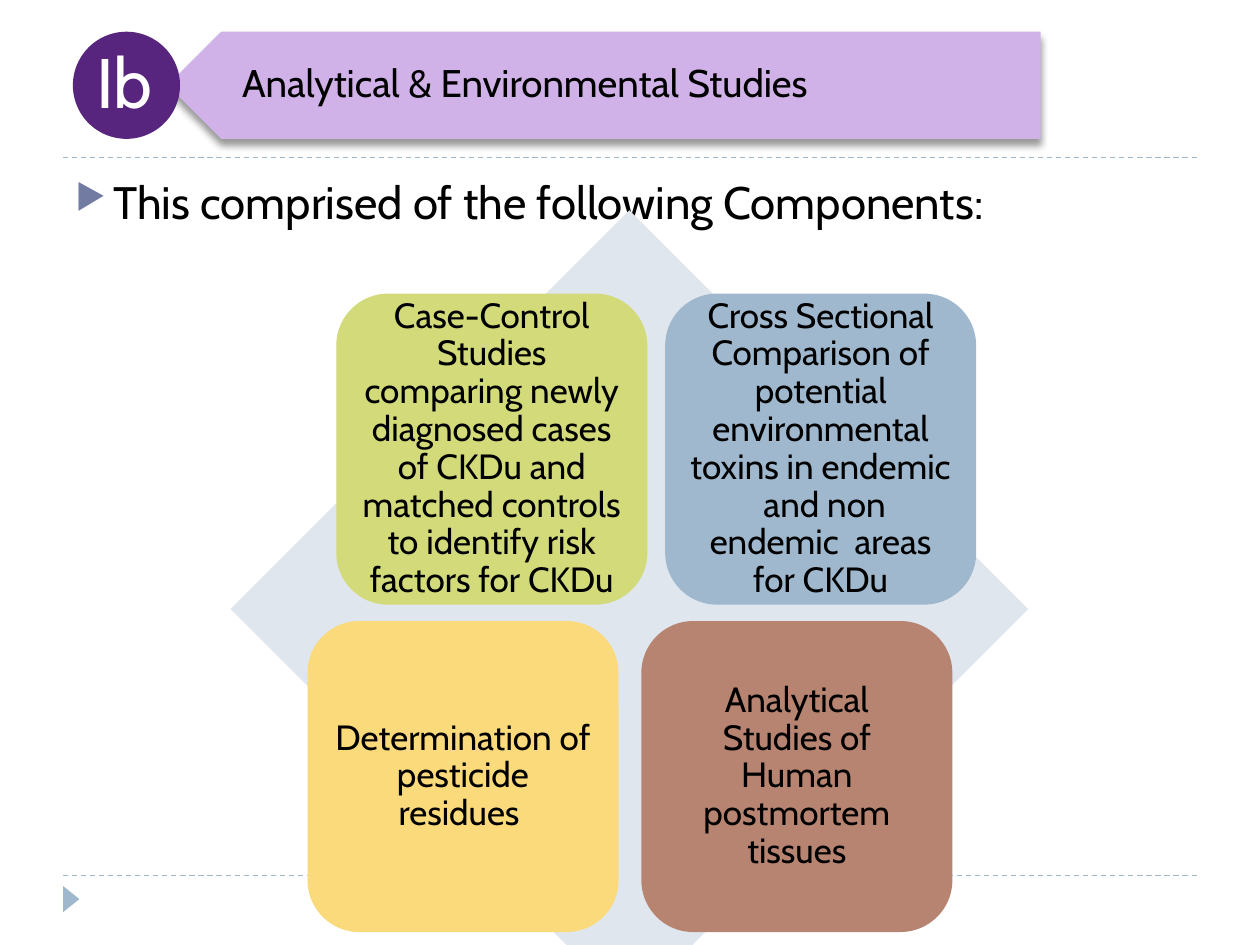
"""Build the slide on analytical and environmental studies of CKDu."""
import lxml.etree
import pptx
import pptx.dml.color
import pptx.enum.dml
import pptx.enum.shapes
import pptx.enum.text
import pptx.oxml
import pptx.oxml.ns
import pptx.util

Cm = pptx.util.Cm
SHAPE = pptx.enum.shapes.MSO_SHAPE
ALIGN = pptx.enum.text.PP_ALIGN
ANCHOR = pptx.enum.text.MSO_ANCHOR
qn = pptx.oxml.ns.qn

FONT = "Cabin"
COLORS = {
    "text": "000000", "badge_text": "FFFFFF", "badge": "57257D",
    "banner": "D1B2E8", "rule": "9FB8CD", "bullet": "727CA3",
    "diamond": "DFE6ED", "blue": "9FB8CD", "green": "D2DA7A",
    "yellow": "FADA7A", "brown": "B88472",
}
BADGE = "Ib"
TITLE = "Analytical & Environmental Studies"
INTRO = "This comprised of the following Components:"
CARD_SIZE = 6.27
CARD_ROWS = [
    (5.92, [
        (6.78, "green", "Case-Control Studies comparing newly diagnosed cases of CKDu "
                        "and matched controls to identify risk factors for CKDu"),
        (13.41, "blue", "Cross Sectional Comparison of potential environmental toxins "
                        "in endemic  and non endemic  areas for CKDu"),
    ]),
    (12.52, [
        (6.2, "yellow", "Determination of pesticide residues "),
        (12.93, "brown", "Analytical Studies of Human postmortem tissues"),
    ]),
]
RULE_TOPS = (17.65, 3.18)
RULE_ENDS = (1.27, 24.13)


def rgb(color):
    return pptx.dml.color.RGBColor.from_string(COLORS[color])


def add_filled(slide, preset, box, color, rotation=0):
    shape = slide.shapes.add_shape(preset, *map(Cm, box))
    shape.shadow.inherit = False
    shape.fill.solid()
    shape.fill.fore_color.rgb = rgb(color)
    shape.line.fill.background()
    shape.rotation = rotation
    return shape


def write(shape, text, size, color="text", anchor=ANCHOR.TOP, align=ALIGN.LEFT,
          margins=(0.25, 0.13, 0.25, 0.13), spacing=None):
    frame = shape.text_frame
    frame.text = text
    frame.word_wrap = True
    frame.vertical_anchor = anchor
    (frame.margin_left, frame.margin_top,
     frame.margin_right, frame.margin_bottom) = map(Cm, margins)
    paragraph = frame.paragraphs[0]
    paragraph.alignment = align
    paragraph.line_spacing = spacing
    font = paragraph.runs[0].font
    font.name, font.size = FONT, pptx.util.Pt(size)
    font.color.rgb = rgb(color)
    return paragraph


def add_text(slide, box, *args, **options):
    return write(slide.shapes.add_textbox(*map(Cm, box)), *args, **options)


def add_rule(slide, top):
    left, right = RULE_ENDS
    rule = slide.shapes.add_connector(
        pptx.enum.shapes.MSO_CONNECTOR.STRAIGHT, Cm(left), Cm(top), Cm(right), Cm(top))
    rule.line.color.rgb = rgb("rule")
    rule.line.width = pptx.util.Pt(0.75)
    rule.line.dash_style = pptx.enum.dml.MSO_LINE.DASH
    lxml.etree.SubElement(rule._element.spPr, qn("a:effectLst"))


def cast_shadow(shape):
    effects = shape._element.spPr.find(qn("a:effectLst"))
    effects.append(pptx.oxml.parse_xml(
        f'<a:outerShdw {pptx.oxml.ns.nsdecls("a")} blurRad="50800" dist="43180" '
        'dir="5400000" rotWithShape="0"><a:srgbClr val="000000">'
        '<a:alpha val="40000"/></a:srgbClr></a:outerShdw>'))


def add_bullet(paragraph):
    properties = paragraph._p.get_or_add_pPr()
    properties.set("marL", str(Cm(0.76)))
    properties.set("indent", str(-Cm(0.76)))
    color = lxml.etree.SubElement(properties, qn("a:buClr"))
    lxml.etree.SubElement(color, qn("a:srgbClr"), val=COLORS["bullet"])
    lxml.etree.SubElement(properties, qn("a:buSzPct"), val="76000")
    lxml.etree.SubElement(properties, qn("a:buChar"), char="▶")


def main():
    deck = pptx.Presentation()
    deck.slide_width, deck.slide_height = Cm(25.4), Cm(19.05)
    slide = deck.slides.add_slide(deck.slide_layouts[6])

    for top in RULE_TOPS:
        add_rule(slide, top)
    add_filled(slide, SHAPE.ISOSCELES_TRIANGLE, (1.17, 17.96, 0.53, 0.33), "rule", 90)
    add_bullet(add_text(slide, (1.27, 3.38, 22.86, 13.72), INTRO, 26))

    cast_shadow(add_filled(slide, SHAPE.PENTAGON, (3.38, 0.64, 17.6, 2.16), "banner", 180))
    add_text(slide, (3.94, 0.64, 17.07, 2.16), TITLE, 22, anchor=ANCHOR.MIDDLE,
             margins=(0.94, 0.23, 0.43, 0.23), spacing=0.9)
    add_filled(slide, SHAPE.OVAL, (1.47, 0.64, 2.16, 2.16), "badge")
    add_text(slide, (1.7, 0.64, 1.7, 1.96), BADGE, 40, "badge_text")

    add_filled(slide, SHAPE.DIAMOND, (4.65, 4.24, 16.08, 16.08), "diamond")
    for top, cards in CARD_ROWS:
        for left, color, text in cards:
            card = add_filled(slide, SHAPE.ROUNDED_RECTANGLE,
                              (left, top, CARD_SIZE, CARD_SIZE), color)
            write(card, text, 20, anchor=ANCHOR.MIDDLE, align=ALIGN.CENTER,
                  margins=(0.2,) * 4, spacing=0.9)

    deck.save("out.pptx")


if __name__ == "__main__":
    main()
